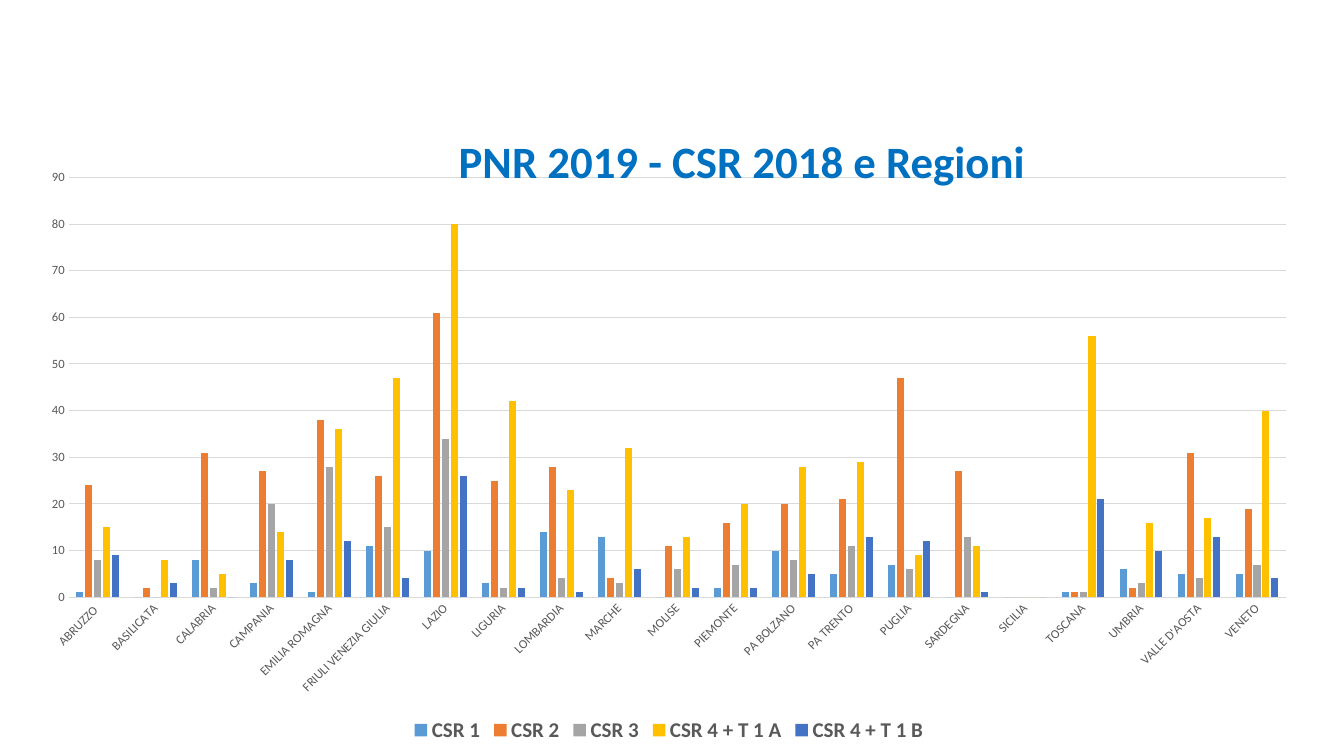
"""Build a slide charting country recommendations by Italian region."""
from pptx import Presentation
from pptx import util as u
from pptx.chart.data import CategoryChartData
from pptx.dml.color import RGBColor
from pptx.enum import chart as charts, text

COLORS = {
    "title": "0070C0", "label": "595959", "grid": "D9D9D9",
    "CSR 1": "5B9BD5", "CSR 2": "ED7D31", "CSR 3": "A5A5A5",
    "CSR 4 + T 1 A": "FFC000", "CSR 4 + T 1 B": "4472C4",
}

REGIONS = [
    "ABRUZZO ", "BASILICATA", "CALABRIA", "CAMPANIA", "EMILIA ROMAGNA",
    "FRIULI VENEZIA GIULIA", "LAZIO", "LIGURIA", "LOMBARDIA", "MARCHE",
    "MOLISE", "PIEMONTE", "PA BOLZANO", "PA TRENTO", "PUGLIA", "SARDEGNA",
    "SICILIA", "TOSCANA", "UMBRIA", "VALLE D'AOSTA", "VENETO",
]

MEASURES = {
    "CSR 1": [1, 0, 8, 3, 1, 11, 10, 3, 14, 13, 0, 2, 10, 5, 7, 0, 0, 1, 6, 5, 5],
    "CSR 2": [24, 2, 31, 27, 38, 26, 61, 25, 28, 4, 11, 16, 20, 21, 47, 27, 0, 1, 2, 31, 19],
    "CSR 3": [8, 0, 2, 20, 28, 15, 34, 2, 4, 3, 6, 7, 8, 11, 6, 13, 0, 1, 3, 4, 7],
    "CSR 4 + T 1 A": [15, 8, 5, 14, 36, 47, 80, 42, 23, 32, 13, 20, 28, 29, 9, 11, 0, 56, 16, 17, 40],
    "CSR 4 + T 1 B": [9, 3, 0, 8, 12, 4, 26, 2, 1, 6, 2, 2, 5, 13, 12, 1, 0, 21, 10, 13, 4],
}


def set_values(target, values):
    """Set each named attribute of the target."""
    for name, value in values.items():
        setattr(target, name, value)


def set_font(font, size, color, bold=False):
    """Apply the slide font in the given size and colour."""
    set_values(font, {"name": "Calibri", "size": u.Pt(size), "bold": bold})
    font.color.rgb = RGBColor.from_string(COLORS[color])


def set_line(line):
    """Give a chart line the thin grid style."""
    line.width = u.Pt(0.75)
    line.color.rgb = RGBColor.from_string(COLORS["grid"])


def add_region_chart(slide, box):
    """Place the clustered column chart in the box."""
    data = CategoryChartData()
    data.categories = REGIONS
    for name, values in MEASURES.items():
        data.add_series(name, values)
    chart = slide.shapes.add_chart(
        charts.XL_CHART_TYPE.COLUMN_CLUSTERED, *map(u.Inches, box), data).chart
    set_values(chart, {"has_title": False, "has_legend": True})
    set_font(chart.font, 10, "label")
    set_values(chart.legend, {
        "position": charts.XL_LEGEND_POSITION.BOTTOM, "include_in_layout": False})
    set_font(chart.legend.font, 15, "label", True)

    plot = chart.plots[0]
    set_values(plot, {"gap_width": 219, "overlap": -27, "vary_by_categories": False})
    for series in plot.series:
        series.format.fill.solid()
        series.format.fill.fore_color.rgb = RGBColor.from_string(COLORS[series.name])

    for axis in (chart.category_axis, chart.value_axis):
        set_values(axis, {"major_tick_mark": charts.XL_TICK_MARK.NONE,
                          "minor_tick_mark": charts.XL_TICK_MARK.NONE})
        set_font(axis.tick_labels.font, 9, "label")
    set_line(chart.category_axis.format.line)
    for body in chart.category_axis._element.xpath("c:txPr/a:bodyPr"):
        body.set("rot", "-2700000")
    set_values(chart.value_axis, {
        "minimum_scale": 0, "maximum_scale": 90, "major_unit": 10,
        "has_major_gridlines": True})
    chart.value_axis.format.line.fill.background()
    set_line(chart.value_axis.major_gridlines.format.line)


def add_title(slide, box):
    """Place the centred slide title in the box."""
    frame = slide.shapes.add_textbox(*map(u.Inches, box)).text_frame
    set_values(frame, {"word_wrap": True,
                       "auto_size": text.MSO_AUTO_SIZE.SHAPE_TO_FIT_TEXT})
    paragraph = frame.paragraphs[0]
    set_values(paragraph, {"text": "PNR 2019 - CSR 2018 e Regioni ",
                           "alignment": text.PP_ALIGN.CENTER})
    set_font(paragraph.runs[0].font, 32, "title", True)


def main():
    """Build and save the presentation."""
    presentation = Presentation()
    set_values(presentation, {"slide_width": u.Inches(13.33),
                              "slide_height": u.Inches(7.5)})
    slide = presentation.slides.add_slide(presentation.slide_layouts[6])
    add_region_chart(slide, (0.26, 1.57, 12.75, 5.84))
    add_title(slide, (4.38, 1.28, 6.06, 0.64))
    presentation.save("out.pptx")


if __name__ == "__main__":
    main()
